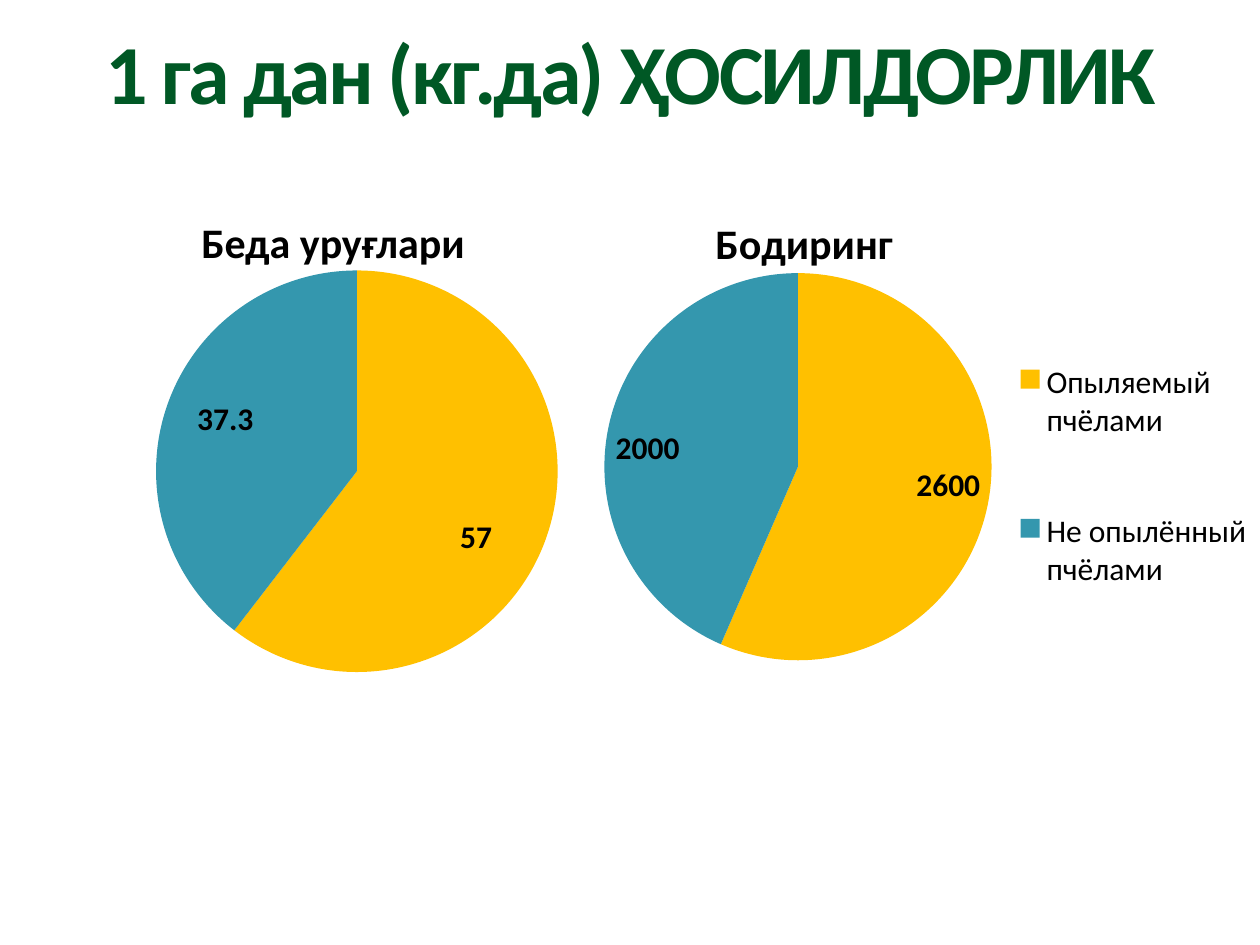
from lxml import etree
from pptx import Presentation
from pptx import util as u
from pptx.chart.data import CategoryChartData
from pptx.dml.color import RGBColor
from pptx.enum import chart as ch, text
from pptx.oxml.ns import qn

FONT = "Calibri"
HUES = {"title": "005825", "ink": "000000", "bees": "FFC000", "none": "3497AE"}


def style(font, size, hue="ink", bold=True):
    font.name, font.size, font.bold = FONT, u.Pt(size), bold
    font.color.rgb = RGBColor.from_string(HUES[hue])


def place(node, index, **vals):
    """Insert a manual chart layout at a child index."""
    outer = etree.Element(qn("c:layout"))
    inner = etree.SubElement(outer, qn("c:manualLayout"))
    for tag, val in vals.items():
        etree.SubElement(inner, qn("c:" + tag)).set("val", str(val))
    node.insert(index, outer)


deck = Presentation()
deck.slide_width, deck.slide_height = u.Inches(10), u.Inches(7.5)
slide = deck.slides.add_slide(deck.slide_layouts[6])

# Heading
box = slide.shapes.add_textbox(*map(u.Inches, (0.42, 0.25, 9.17, 0.73)))
frame = box.text_frame
frame.word_wrap = True
frame.margin_left = frame.margin_right = frame.margin_top = frame.margin_bottom = 0
frame.text = "1 га дан (кг.да) ҲОСИЛДОРЛИК"
para = frame.paragraphs[0]
para.alignment, para.line_spacing = text.PP_ALIGN.CENTER, 0.9
style(para.runs[0].font, 48, "title")
para.runs[0].font._element.set("spc", "-150")

# Pies: area, categories, values, plot area, label shifts, legend
pies = [
    ((0.5, 1.75, 4.83, 3.81), ("1", "2"), (57, 37.3),
     (0.153, 0.103, 0.66, 0.839), ((0.04, 0.07), (-0.06, -0.04)), False),
    ((4.58, 0.83, 5.42, 5.67), ("Опыляемый пчёлами", "Не опылённый пчёлами"),
     (2600, 2000), (0.04, 0.236, 0.567, 0.542), (), True),
]
for area, cats, vals, plot, shifts, keyed in pies:
    data = CategoryChartData()
    data.categories = cats
    data.add_series("Series 1", vals)
    chart = slide.shapes.add_chart(
        ch.XL_CHART_TYPE.PIE, *map(u.Inches, area), data).chart
    chart.has_title = False
    style(chart.font, 18, bold=False)
    pie = chart.plots[0]
    pie.vary_by_categories = True
    points = pie.series[0].points
    for i, hue in enumerate(("bees", "none")):
        fill = points[i].format.fill
        fill.solid()
        fill.fore_color.rgb = RGBColor.from_string(HUES[hue])

    spot = ch.XL_LABEL_POSITION
    labels = pie.series[0].data_labels
    labels.show_value = True
    labels.position = spot.CENTER if shifts else spot.INSIDE_END
    style(labels.font, 18)
    for i, (dx, dy) in enumerate(shifts):
        label = points[i].data_label
        style(label.font, 18)
        label.position = spot.CENTER
        place(labels._element.findall(qn("c:dLbl"))[i], 1, x=dx, y=dy)

    area_node = chart._chartSpace.chart.plotArea
    for old in area_node.findall(qn("c:layout")):
        area_node.remove(old)
    x, y, w, h = plot
    place(area_node, 0, layoutTarget="inner", xMode="edge", yMode="edge",
          x=x, y=y, w=w, h=h)

    chart.has_legend = keyed
    if keyed:
        key = chart.legend
        key.position = ch.XL_LEGEND_POSITION.RIGHT
        key.include_in_layout = False
        style(key.font, 18, bold=False)
        for old in key._element.findall(qn("c:layout")):
            key._element.remove(old)
        place(key._element, 1, xMode="edge", yMode="edge",
              x=0.63, y=0.26, w=0.37, h=0.52)

# Crop names above the pies
for crop, left, top, wide in (("Беда уруғлари", 1.5, 1.67, 2.4),
                              ("Бодиринг", 5.58, 1.68, 1.69)):
    box = slide.shapes.add_textbox(*map(u.Inches, (left, top, wide, 0.5)))
    box.text_frame.word_wrap = False
    box.text_frame.text = crop
    style(box.text_frame.paragraphs[0].runs[0].font, 24)

deck.save("out.pptx")
